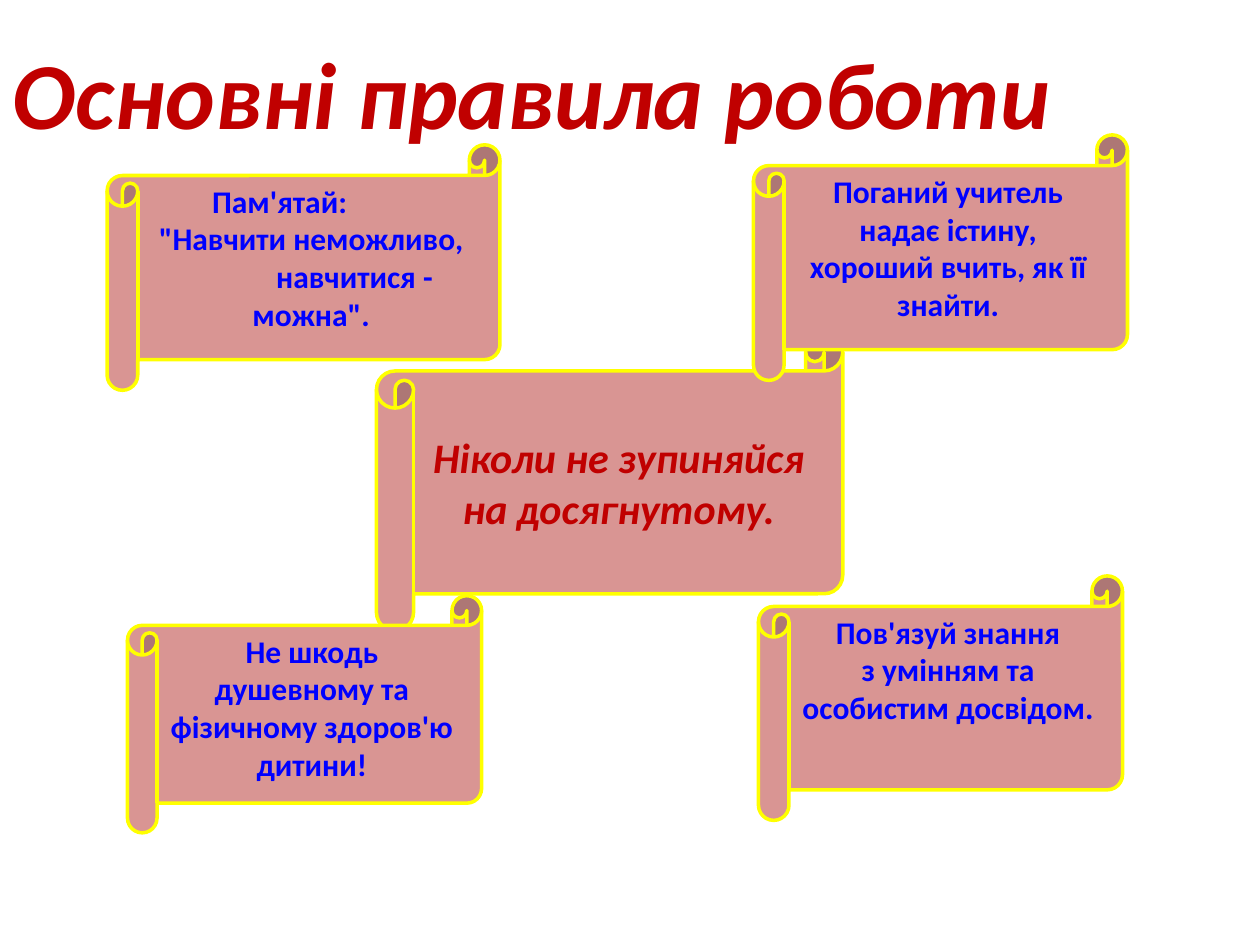
import dataclasses

import pptx
import pptx.dml.color
import pptx.enum.shapes
import pptx.enum.text
import pptx.util

Cm = pptx.util.Cm
ALIGN = pptx.enum.text.PP_ALIGN
ANCHOR = pptx.enum.text.MSO_ANCHOR


@dataclasses.dataclass(frozen=True)
class Theme:
    font: str = "Calibri"
    accent: str = "C00000"
    rule: str = "0000FF"
    paper: str = "D99593"
    edge: str = "FFFF00"
    title_size: int = 54
    motto_size: int = 24
    rule_size: int = 18
    edge_width: int = 2


def write(p, text, size, color, font, italic=False, align=ALIGN.CENTER, indent=0):
    if indent:
        p._p.get_or_add_pPr().set("marL", str(Cm(indent)))
        align = ALIGN.LEFT
    p.alignment = align
    r = p.add_run()
    r.text = text
    r.font.name = font
    r.font.size = pptx.util.Pt(size)
    r.font.bold = True
    r.font.italic = italic
    r.font.color.rgb = pptx.dml.color.RGBColor.from_string(color)


class RulesSlide:
    def __init__(self, prs, theme):
        self.theme = theme
        self.s = prs.slides.add_slide(prs.slide_layouts[5])

    def title(self, text, left, top, width, height):
        t = self.theme
        sp = self.s.shapes.title
        sp.left, sp.top, sp.width, sp.height = map(Cm, (left, top, width, height))
        tf = sp.text_frame
        tf.auto_size = pptx.enum.text.MSO_AUTO_SIZE.NONE
        tf.vertical_anchor = ANCHOR.TOP
        write(tf.paragraphs[0], text, t.title_size, t.accent, t.font,
              italic=True, align=ALIGN.LEFT)

    def scroll(self, box, lines, size, color, italic=False, anchor=ANCHOR.TOP):
        t = self.theme
        sp = self.s.shapes.add_shape(
            pptx.enum.shapes.MSO_SHAPE.HORIZONTAL_SCROLL, *map(Cm, box))
        sp.shadow.inherit = False
        sp.fill.solid()
        sp.fill.fore_color.rgb = pptx.dml.color.RGBColor.from_string(t.paper)
        sp.line.color.rgb = pptx.dml.color.RGBColor.from_string(t.edge)
        sp.line.width = pptx.util.Pt(t.edge_width)
        tf = sp.text_frame
        tf.word_wrap = True
        tf.vertical_anchor = anchor
        for i, (text, indent) in enumerate(lines):
            p = tf.add_paragraph() if i else tf.paragraphs[0]
            write(p, text, size, color, t.font, italic=italic, indent=indent)

    def motto(self, box, text):
        t = self.theme
        self.scroll(box, [(text, 0)], t.motto_size, t.accent,
                    italic=True, anchor=ANCHOR.MIDDLE)

    def rule(self, box, *lines):
        self.scroll(box, lines, self.theme.rule_size, self.theme.rule)


def main():
    prs = pptx.Presentation()
    prs.slide_width, prs.slide_height = Cm(25.4), Cm(19.05)
    s = RulesSlide(prs, Theme())
    s.title("Основні правила роботи", 0, 0.58, 25.4, 2.54)
    s.motto((7.59, 6.73, 9.4, 5.99), "Ніколи не зупиняйся на досягнутому.")
    s.rule((2.16, 2.92, 7.92, 4.95),
           ("Пам'ятай:", 1.25), ("\"Навчити неможливо,", 0),
           ("навчитися -", 2.54), ("можна\".", 0))
    s.rule((15.19, 2.72, 7.54, 4.95),
           ("Поганий учитель надає істину,", 0),
           ("хороший вчить, як її знайти.", 0))
    s.rule((2.57, 12.01, 7.14, 4.78),
           ("Не шкодь душевному та фізичному здоров'ю дитини!", 0))
    s.rule((15.29, 11.61, 7.34, 4.93),
           ("Пов'язуй знання", 0), ("з умінням та особистим досвідом.", 0))
    prs.save("out.pptx")


if __name__ == "__main__":
    main()
